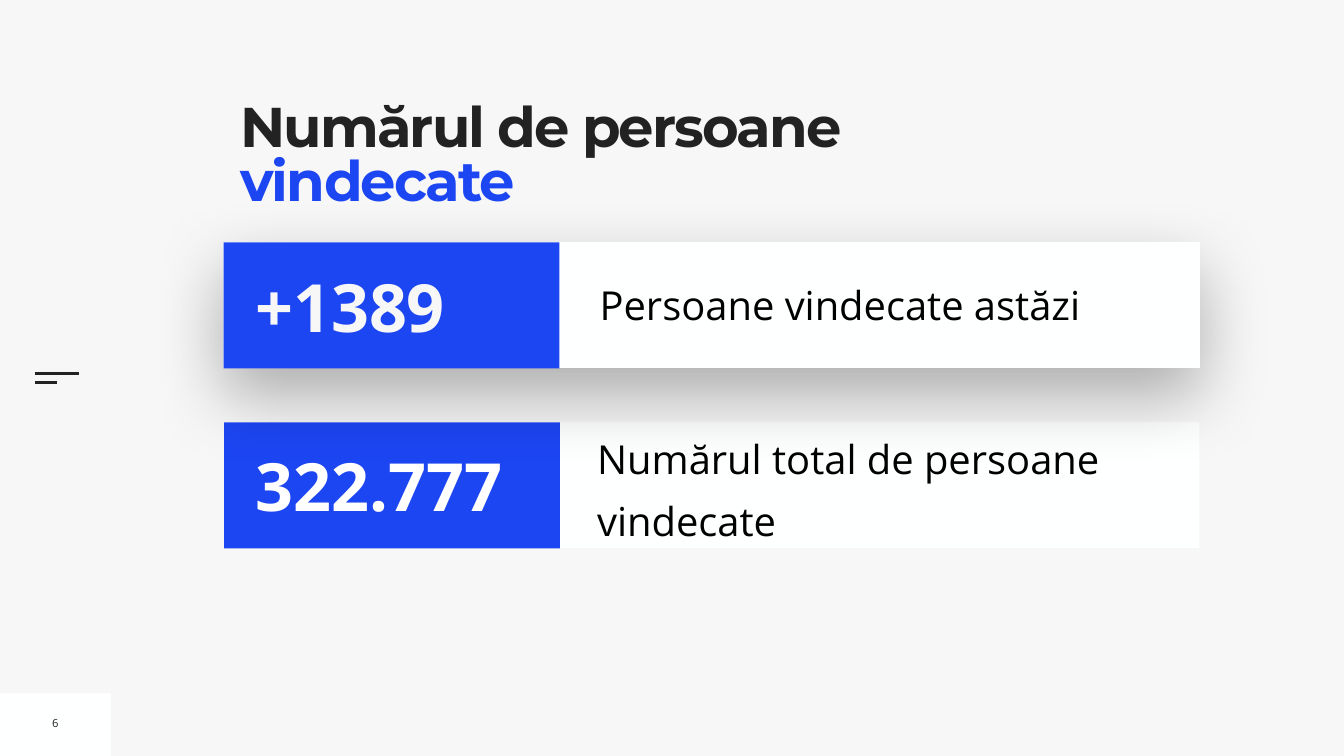
"""Build the slide on the number of recovered people, with two figure cards."""
import lxml.etree
import pptx
import pptx.dml.color
import pptx.enum.shapes
import pptx.enum.text
import pptx.oxml
import pptx.oxml.ns
import pptx.util

PX = 9144
COLORS = {"background": "F7F7F7", "card": "FEFFFF", "blue": "1D46F3",
          "dark": "222222", "black": "000000", "white": "FFFFFF"}
qn = pptx.oxml.ns.qn
rgb = pptx.dml.color.RGBColor.from_string


def add_rectangle(slide, box, color):
    shape = slide.shapes.add_shape(
        pptx.enum.shapes.MSO_SHAPE.RECTANGLE, *[value * PX for value in box])
    shape.shadow.inherit = False
    shape.fill.solid()
    shape.fill.fore_color.rgb = rgb(COLORS[color])
    shape.line.fill.background()
    return shape


def add_text(slide, box, text, size, color, bold=False, inset=10):
    shape = slide.shapes.add_textbox(*[value * PX for value in box])
    frame = shape.text_frame
    frame.text = text
    frame.word_wrap = True
    frame.vertical_anchor = pptx.enum.text.MSO_ANCHOR.MIDDLE
    frame.margin_left = frame.margin_right = inset * PX
    frame.margin_top = frame.margin_bottom = inset * PX
    font = frame.paragraphs[0].runs[0].font
    font.name = "Open Sans"
    font.size = pptx.util.Pt(size)
    font.bold = bold
    font.color.rgb = rgb(COLORS[color])
    return frame


presentation = pptx.Presentation()
presentation.slide_width = 2667 * PX
presentation.slide_height = 1500 * PX
slide = presentation.slides.add_slide(presentation.slide_layouts[5])
slide.background.fill.solid()
slide.background.fill.fore_color.rgb = rgb(COLORS["background"])

add_rectangle(slide, (0, 1376, 220, 124), "card")
for right, y in ((157, 741), (113, 759)):
    line = slide.shapes.add_connector(
        pptx.enum.shapes.MSO_CONNECTOR.STRAIGHT, 69 * PX, y * PX, right * PX, y * PX)
    line.line.color.rgb = rgb(COLORS["dark"])
    line.line.width = pptx.util.Pt(3)
    lxml.etree.SubElement(line._element.spPr, qn("a:effectLst"))

title = slide.shapes.title
title.left, title.top, title.width, title.height = [
    value * PX for value in (477, 207, 1301, 273)]
title.fill.solid()
title.fill.fore_color.rgb = rgb(COLORS["background"])
frame = title.text_frame
frame.word_wrap = True
frame.auto_size = pptx.enum.text.MSO_AUTO_SIZE.NONE
frame.vertical_anchor = pptx.enum.text.MSO_ANCHOR.TOP
frame.margin_left = frame.margin_right = frame.margin_top = frame.margin_bottom = 0
paragraph = frame.paragraphs[0]
paragraph.alignment = pptx.enum.text.PP_ALIGN.LEFT
paragraph.line_spacing = 0.8
for text, color in (("Numărul de persoane ", "dark"), ("vindecate", "blue")):
    run = paragraph.add_run()
    run.text = text
    run.font.name = "Montserrat"
    run.font.size = pptx.util.Pt(80)
    run.font.bold = True
    run.font.color.rgb = rgb(COLORS[color])
    run.font._element.set("spc", "-270")

page_number = add_text(slide, (93, 1409, 34, 51), "6", 16, "dark")
page_number.word_wrap = False
page_number.paragraphs[0].alignment = pptx.enum.text.PP_ALIGN.CENTER

add_rectangle(slide, (445, 837, 1935, 250), "card")
total_label = add_text(slide, (1185, 839, 1195, 236),
                       "Numărul total de persoane vindecate", 57, "black", inset=0)
total_label.paragraphs[0].line_spacing = 1.3
total_label.paragraphs[0].space_before = pptx.util.Pt(20)
add_rectangle(slide, (445, 838, 666, 250), "blue")
add_text(slide, (498, 873, 603, 180), "322.777", 95, "white", bold=True)

today_card = add_rectangle(slide, (444, 480, 1937, 250), "card")
effects = today_card._element.spPr.find(qn("a:effectLst"))
shadow = lxml.etree.SubElement(
    effects, qn("a:outerShdw"), blurRad=str(pptx.util.Pt(100)),
    dist=str(pptx.util.Pt(40)), dir="5400000", rotWithShape="0")
shadow_color = lxml.etree.SubElement(shadow, qn("a:srgbClr"), val=COLORS["black"])
lxml.etree.SubElement(shadow_color, qn("a:alpha"), val="30000")
add_text(slide, (1180, 547, 1176, 116), "Persoane vindecate astăzi", 57, "black")
add_rectangle(slide, (444, 481, 666, 250), "blue")
add_text(slide, (497, 516, 603, 180), "+1389", 95, "background", bold=True)

presentation.save("out.pptx")
